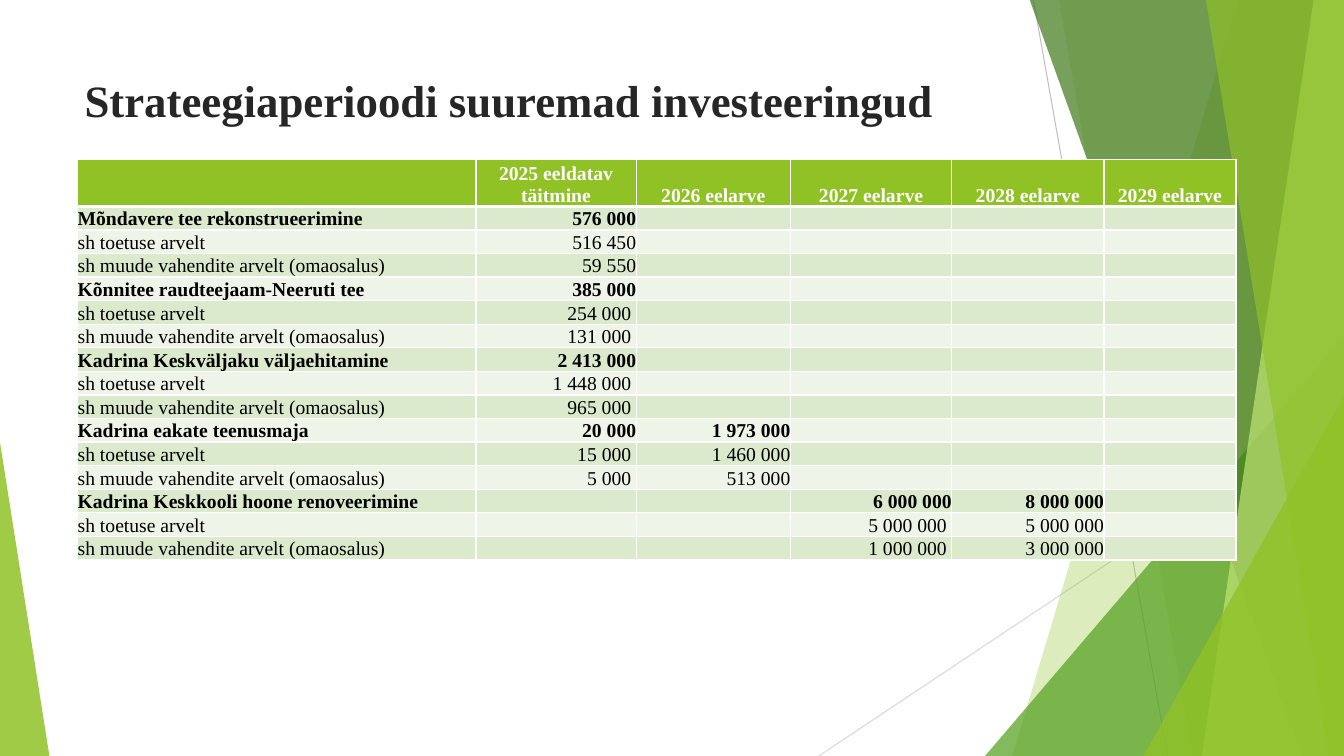
import pptx
import pptx.util
import pptx.dml.color
import pptx.enum.shapes
import pptx.enum.text
import pptx.oxml
import pptx.oxml.ns
from lxml import etree

Inches = pptx.util.Inches
RGB = pptx.dml.color.RGBColor
Align = pptx.enum.text.PP_ALIGN
Anchor = pptx.enum.text.MSO_ANCHOR
qn = pptx.oxml.ns.qn

LIME = RGB(0x90, 0xC2, 0x26)
GREEN = RGB(0x54, 0xA0, 0x21)
FOREST = RGB(0x3F, 0x78, 0x19)
PALE_LIME = RGB(0xC0, 0xE4, 0x74)
BAND_DARK = RGB(0xDB, 0xE9, 0xCD)
BAND_LIGHT = RGB(0xEE, 0xF4, 0xE8)
GREY = RGB(0xBF, 0xBF, 0xBF)
LIGHT_GREY = RGB(0xD9, 0xD9, 0xD9)
CHARCOAL = RGB(0x26, 0x26, 0x26)
BLACK = RGB(0, 0, 0)
WHITE = RGB(0xFF, 0xFF, 0xFF)
FONT = "Times New Roman"

YEARS = ["", "2025 eeldatav täitmine", "2026 eelarve", "2027 eelarve",
         "2028 eelarve", "2029 eelarve"]
GRANT = "sh toetuse arvelt"
OWN_SHARE = "sh muude vahendite arvelt (omaosalus)"
# Project name, then {year column: (total, grant, own share)}
PROJECTS = [
    ("Mõndavere tee rekonstrueerimine", {1: ("576 000", "516 450", "59 550")}),
    ("Kõnnitee raudteejaam-Neeruti tee", {1: ("385 000", "254 000 ", "131 000 ")}),
    ("Kadrina Keskväljaku väljaehitamine", {1: ("2 413 000", "1 448 000 ", "965 000 ")}),
    ("Kadrina eakate teenusmaja", {1: ("20 000", "15 000 ", "5 000 "),
                                   2: ("1 973 000", "1 460 000", "513 000")}),
    ("Kadrina Keskkooli hoone renoveerimine", {3: ("6 000 000", "5 000 000 ", "1 000 000 "),
                                               4: ("8 000 000", "5 000 000", "3 000 000")}),
]
COLUMN_WIDTHS = [3.95, 1.59, 1.53, 1.6, 1.51, 1.31]
HEADER_HEIGHT, ROW_HEIGHT = 0.45, 0.23


def apply(target, formats):
    for attribute, value in formats.items():
        setattr(target, attribute, value)


def paint(facet, color, opacity):
    facet.shadow.inherit = False
    facet.line.fill.background()
    facet.fill.solid()
    facet.fill.fore_color.rgb = color
    tint = facet.fill._xPr.find(qn("a:solidFill"))[0]
    etree.SubElement(tint, qn("a:alpha"), val=str(opacity * 1000))


def add_facets(slide, left, top, width, height):
    right, bottom = left + width, top + height

    # Thin grey lines
    for x1, y1, x2, y2, color in [(10.25, 0, 11.58, 7.5, GREY),
                                  (13.33, 4.03, 8.12, 7.5, LIGHT_GREY)]:
        ray = slide.shapes.add_connector(
            pptx.enum.shapes.MSO_CONNECTOR.STRAIGHT,
            Inches(left + x1), Inches(top + y1), Inches(left + x2), Inches(top + y2))
        ray.line.color.rgb = color
        ray.line.width = pptx.util.Pt(0.75)
        etree.SubElement(ray._element.spPr, qn("a:effectLst"))

    def blade(top_x, bottom_x, color, opacity):
        outline = slide.shapes.build_freeform(
            Inches(left + top_x), Inches(top - 0.01))
        outline.add_line_segments([
            (Inches(right), Inches(top - 0.01)), (Inches(right), Inches(bottom)),
            (Inches(left + bottom_x), Inches(bottom))], close=True)
        paint(outline.convert_to_shape(), color, opacity)

    def corner(x, wide, tall, apex, color, opacity):
        triangle = slide.shapes.add_shape(
            pptx.enum.shapes.MSO_SHAPE.ISOSCELES_TRIANGLE, Inches(left + x),
            Inches(bottom - tall), Inches(wide), Inches(tall))
        triangle.adjustments[0] = apex
        paint(triangle, color, opacity)

    # Translucent facets, back to front
    blade(12.28, 10.04, LIME, 30)
    blade(10.5, 11.83, LIME, 20)
    corner(9.77, 3.56, 4.17, 1, GREEN, 72)
    blade(10.21, 12.91, FOREST, 70)
    blade(13.03, 11.92, PALE_LIME, 70)
    blade(11.96, 13.18, LIME, 65)
    corner(11.34, 1.99, 3.57, 1, LIME, 80)
    corner(0, 0.49, 3.11, 0, LIME, 85)


def add_title(slide, left, top, width, height):
    title = slide.shapes.add_textbox(*map(Inches, (left, top, width, height)))
    apply(title.text_frame, {"word_wrap": True, "vertical_anchor": Anchor.TOP})
    run = title.text_frame.paragraphs[0].add_run()
    run.text = "Strateegiaperioodi suuremad investeeringud"
    apply(run.font, {"name": FONT, "size": pptx.util.Pt(32), "bold": True})
    run.font.color.rgb = CHARCOAL


def fill_cell(cell, text, fill, color, bold, align, top_line, bottom_line):
    apply(cell, {"margin_left": 0, "margin_right": 0, "margin_top": 0,
                 "margin_bottom": 0, "vertical_anchor": Anchor.BOTTOM})
    # White borders, widths in points
    properties = cell._tc.get_or_add_tcPr()
    for side, points in {"L": 1, "R": 1, "T": top_line, "B": bottom_line}.items():
        border = etree.SubElement(properties, qn("a:ln" + side),
                                  w=str(pptx.util.Pt(points)))
        solid = etree.SubElement(border, qn("a:solidFill"))
        etree.SubElement(solid, qn("a:srgbClr"), val=str(WHITE))
    cell.fill.solid()
    cell.fill.fore_color.rgb = fill

    paragraph = cell.text_frame.paragraphs[0]
    paragraph.alignment = align
    if text:
        run = paragraph.add_run()
        run.text = text
        apply(run.font, {"name": FONT, "size": pptx.util.Pt(14), "bold": bold})
        run.font.color.rgb = color
    else:
        # Keeps an empty cell from stretching its row
        etree.SubElement(paragraph._p, qn("a:endParaRPr"), sz="1400")


def add_investments(slide, left, top, width, height):
    rows = [YEARS]
    for project, amounts in PROJECTS:
        for part, label in enumerate((project, GRANT, OWN_SHARE)):
            rows.append([label] + [amounts[year][part] if year in amounts else ""
                                   for year in range(1, len(YEARS))])

    investments = slide.shapes.add_table(
        len(rows), len(YEARS), *map(Inches, (left, top, width, height))).table
    for column, column_width in zip(investments.columns, COLUMN_WIDTHS):
        column.width = Inches(column_width)
    for r, values in enumerate(rows):
        header = r == 0
        investments.rows[r].height = Inches(HEADER_HEIGHT if header else ROW_HEIGHT)
        band = LIME if header else BAND_DARK if r % 2 else BAND_LIGHT
        for c, text in enumerate(values):
            align = Align.CENTER if header else Align.RIGHT if c else Align.LEFT
            fill_cell(investments.cell(r, c), text, band, WHITE if header else BLACK,
                      header or r % 3 == 1, align,
                      3 if r == 1 else 1, 3 if header else 1)


def main():
    deck = pptx.Presentation()
    apply(deck, {"slide_width": Inches(13.33), "slide_height": Inches(7.5)})
    slide = deck.slides.add_slide(deck.slide_layouts[6])
    add_facets(slide, 0, 0, 13.33, 7.5)
    add_title(slide, 0.74, 0.67, 9.4, 1.44)
    add_investments(slide, 0.77, 1.58, 11.49, 3.9)
    deck.save("out.pptx")


if __name__ == "__main__":
    main()
